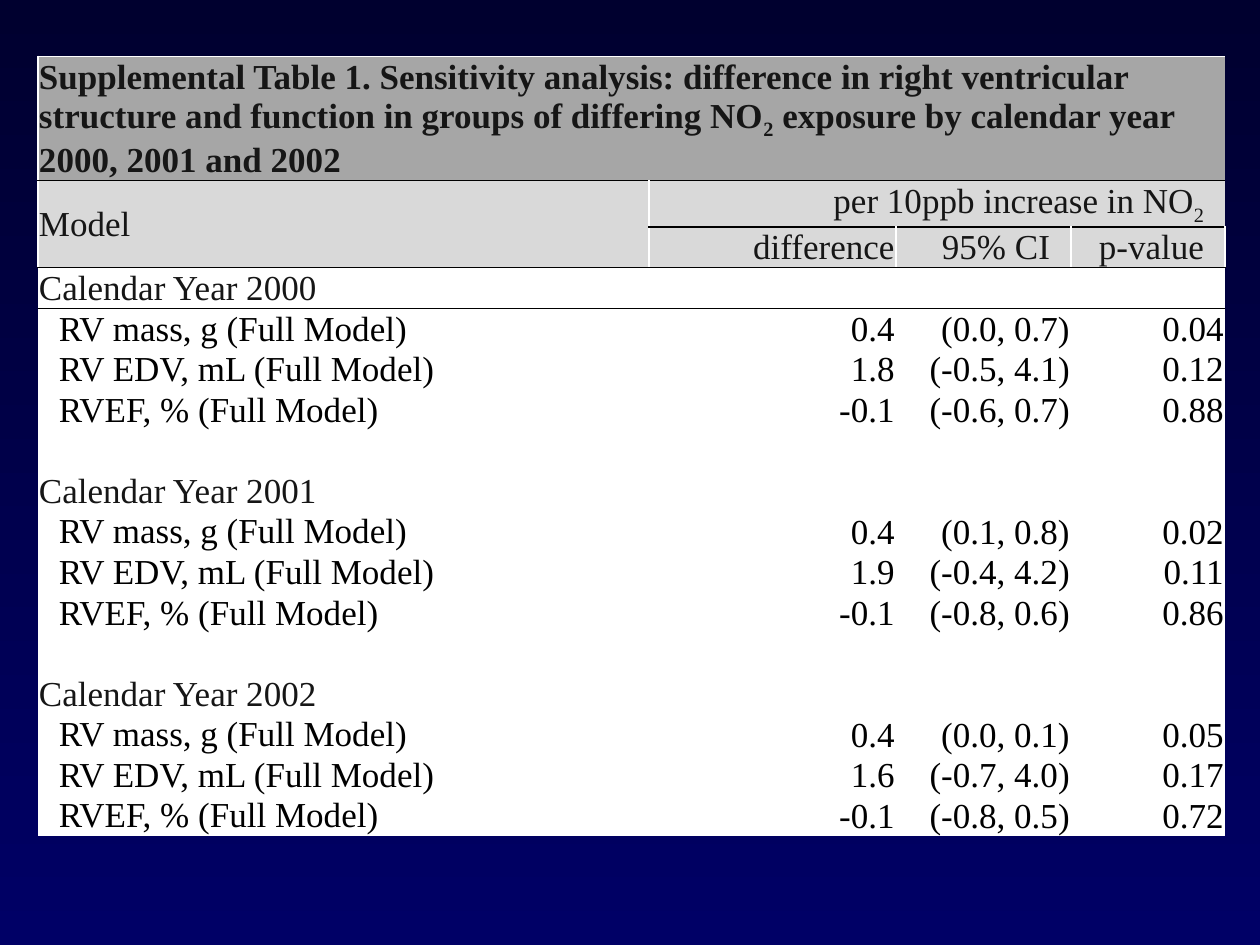
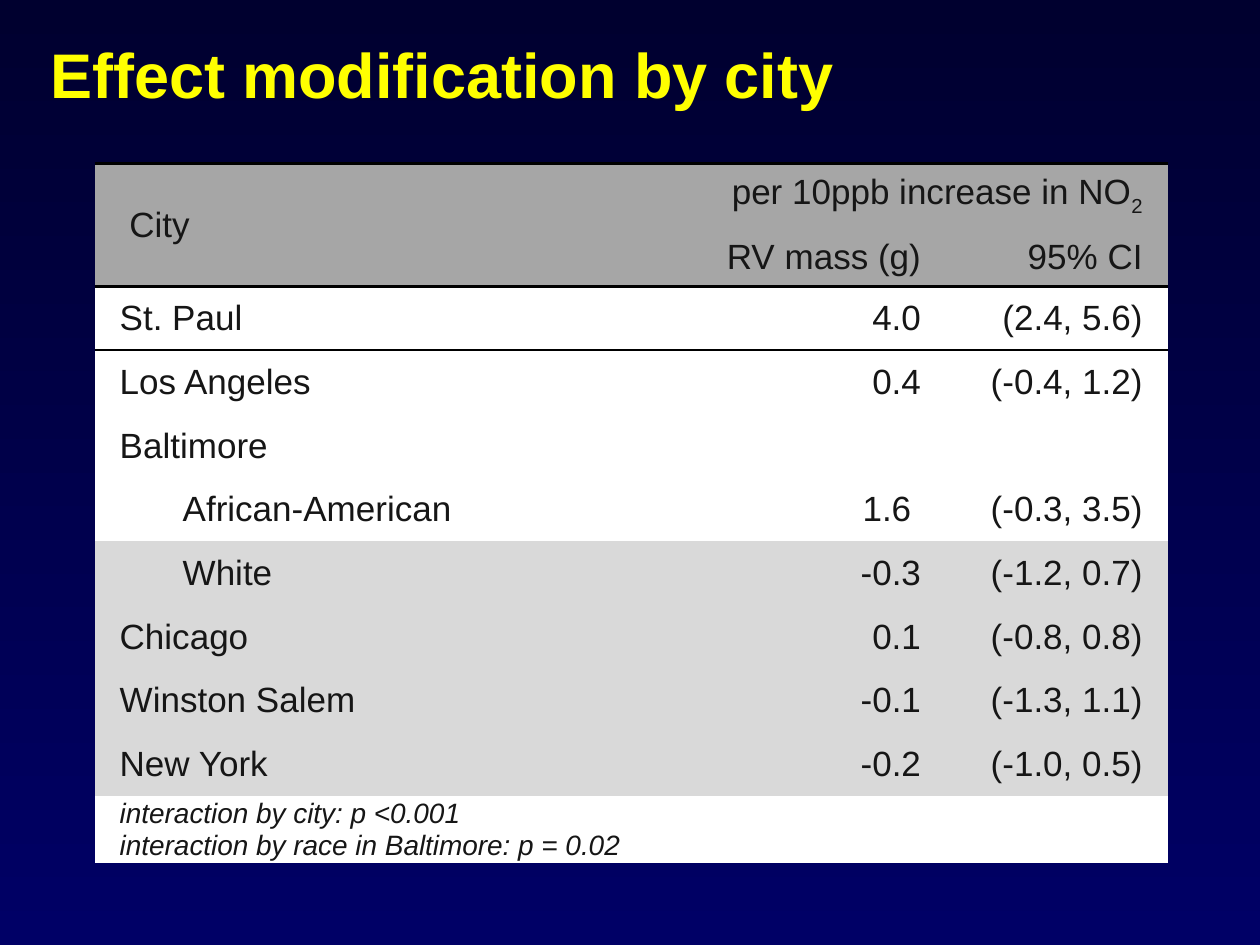
import dataclasses

import pptx
import pptx.dml.color
import pptx.enum.text
import pptx.oxml.ns
import pptx.util
from lxml import etree

Pt = pptx.util.Pt
ANCHOR = pptx.enum.text.MSO_ANCHOR
ALIGN = pptx.enum.text.PP_ALIGN


@dataclasses.dataclass(frozen=True)
class Theme:
    background_top: str = "00002F"
    background_bottom: str = "000066"
    title: str = "FFFF00"
    text: str = "161616"
    black: str = "000000"
    white: str = "FFFFFF"
    dark_band: str = "A6A6A6"
    light_band: str = "D9D9D9"
    sans: str = "Arial"
    serif: str = "Times New Roman"
    title_size: int = 36
    table_size: int = 20
    note_size: int = 16


THEME = Theme()
NO_STYLE = "{2D5ABB26-0587-4C30-8999-92F81FD0307C}"
BORDER_ORDER = ("lnL", "lnR", "lnT", "lnB")

# Content; a character between tildes is a subscript
EXPOSURE = "per 10ppb increase in NO~2~"

SENSITIVITY_TITLE = ("Supplemental Table 1. Sensitivity analysis: difference in right "
                     "ventricular structure and function in groups of differing NO~2~ "
                     "exposure by calendar year 2000, 2001 and 2002")
SENSITIVITY_HEADINGS = ("difference", "95% CI", "p-value")
MEASURES = ("RV mass, g (Full Model)", "RV EDV, mL (Full Model)", "RVEF, % (Full Model)")
YEARS = {
    "Calendar Year 2000": [("0.4", "(0.0, 0.7)", "0.04"),
                           ("1.8", "(-0.5, 4.1)", "0.12"),
                           ("-0.1", "(-0.6, 0.7)", "0.88")],
    "Calendar Year 2001": [("0.4", "(0.1, 0.8)", "0.02"),
                           ("1.9", "(-0.4, 4.2)", "0.11"),
                           ("-0.1", "(-0.8, 0.6)", "0.86")],
    "Calendar Year 2002": [("0.4", "(0.0, 0.1)", "0.05"),
                           ("1.6", "(-0.7, 4.0)", "0.17"),
                           ("-0.1", "(-0.8, 0.5)", "0.72")],
}

CITY_TITLE = "Effect modification by city"
CITY_HEADINGS = ("RV mass (g)", "95% CI")
CITIES = [
    ("St. Paul", "4.0", "(2.4, 5.6)"),
    ("Los Angeles", "0.4", "(-0.4, 1.2)"),
    ("Baltimore", "", ""),
    ("African-American", "1.6 ", "(-0.3, 3.5)"),
    ("White", "-0.3", "(-1.2, 0.7)"),
    ("Chicago", "0.1", "(-0.8, 0.8)"),
    ("Winston Salem", "-0.1", "(-1.3, 1.1)"),
    ("New York", "-0.2", "(-1.0, 0.5)"),
]
SUBGROUPS = ("African-American", "White")
FIRST_SHADED_CITY = 4
INTERACTIONS = "interaction by city: p <0.001\ninteraction by race in Baltimore: p = 0.02"


# Shared parts
def rgb(color):
    return pptx.dml.color.RGBColor.from_string(color)


def add_slide(presentation):
    slide = presentation.slides.add_slide(presentation.slide_layouts[6])
    fill = slide.background.fill
    fill.gradient()
    fill.gradient_angle = 270
    for stop, color in zip(fill.gradient_stops, (THEME.background_top, THEME.background_bottom)):
        stop.color.rgb = rgb(color)
    return slide


def style_font(font, name, size, color, bold=False, italic=False):
    font.name, font.size = name, Pt(size)
    font.bold, font.italic = bold, italic
    font.color.rgb = rgb(color)


def add_title(slide, text):
    box = slide.shapes.add_textbox(Pt(21.6), Pt(20.9), Pt(698.4), Pt(47.5))
    frame = box.text_frame
    frame.word_wrap = True
    frame.vertical_anchor = ANCHOR.MIDDLE
    paragraph = frame.paragraphs[0]
    paragraph.text = text
    paragraph.line_spacing = 0.9
    style_font(paragraph.font, THEME.sans, THEME.title_size, THEME.title, bold=True)


def add_table(slide, left, top, widths, heights):
    frame = slide.shapes.add_table(len(heights), len(widths), Pt(left), Pt(top),
                                   Pt(sum(widths)), Pt(sum(heights)))
    table = frame.table
    table.first_row = table.horz_banding = False
    table._tbl.tblPr.find(pptx.oxml.ns.qn("a:tableStyleId")).text = NO_STYLE
    for column, width in zip(table.columns, widths):
        column.width = Pt(width)
    for row, height in zip(table.rows, heights):
        row.height = Pt(height)
    return table


def set_cell(cell, text, fill, margins, font, align=ALIGN.LEFT, anchor=ANCHOR.MIDDLE, **style):
    """Fill a cell; font is (name, size, colour), margins are (left, top, right, bottom)."""
    cell.fill.solid()
    cell.fill.fore_color.rgb = rgb(fill)
    (cell.margin_left, cell.margin_top,
     cell.margin_right, cell.margin_bottom) = map(Pt, margins)
    cell.vertical_anchor = anchor
    frame = cell.text_frame
    for index, line in enumerate(text.split("\n")):
        paragraph = frame.add_paragraph() if index else frame.paragraphs[0]
        paragraph.alignment = align
        style_font(paragraph.font, *font, **style)
        for part_index, part in enumerate(line.split("~")):
            if part:
                run = paragraph.add_run()
                run.text = part
                if part_index % 2:
                    run._r.get_or_add_rPr().set("baseline", "-25000")


def set_border(table, rows, columns, side, color, width=1):
    for row in rows:
        for column in columns:
            properties = table.cell(row, column)._tc.get_or_add_tcPr()
            earlier = BORDER_ORDER[:BORDER_ORDER.index(side)]
            place = sum(etree.QName(child).localname in earlier for child in properties)
            line = etree.Element(pptx.oxml.ns.qn("a:" + side), w=str(Pt(width)))
            solid = etree.SubElement(line, pptx.oxml.ns.qn("a:solidFill"))
            etree.SubElement(solid, pptx.oxml.ns.qn("a:srgbClr"), val=color)
            properties.insert(place, line)


def build_sensitivity_slide(presentation):
    slide = add_slide(presentation)
    body_rows = []
    for year, results in YEARS.items():
        if body_rows:
            body_rows.append(("", "", "", ""))
        body_rows.append((year, "", "", ""))
        body_rows += [(measure, *values) for measure, values in zip(MEASURES, results)]

    table = add_table(slide, 21.6, 32.2, (349.2, 141.1, 100.1, 88),
                      [71, 26.6, 23.2] + [23.2] * len(body_rows))
    font = (THEME.serif, THEME.table_size, THEME.text)
    data_font = (THEME.serif, THEME.table_size, THEME.black)
    tight, indented, right_gap = (0.7, 0.7, 0.7, 0), (12, 0.7, 0.7, 0), (0.7, 0.7, 12, 0)

    # Heading rows
    table.cell(0, 0).merge(table.cell(0, 3))
    table.cell(1, 0).merge(table.cell(2, 0))
    table.cell(1, 1).merge(table.cell(1, 3))
    set_cell(table.cell(0, 0), SENSITIVITY_TITLE, THEME.dark_band, tight, font, bold=True)
    set_cell(table.cell(1, 0), "Model", THEME.light_band, tight, font)
    set_cell(table.cell(1, 1), EXPOSURE, THEME.light_band, right_gap, font, ALIGN.RIGHT)
    for column, heading in enumerate(SENSITIVITY_HEADINGS, 1):
        set_cell(table.cell(2, column), heading, THEME.light_band,
                 tight if column == 1 else right_gap, font, ALIGN.RIGHT)

    # Results by year
    for row, (label, *values) in enumerate(body_rows, 3):
        is_measure = label in MEASURES
        set_cell(table.cell(row, 0), label, THEME.white, indented if is_measure else tight,
                 data_font if is_measure else font)
        for column, value in enumerate(values, 1):
            set_cell(table.cell(row, column), value, THEME.white, tight, data_font,
                     ALIGN.RIGHT, ANCHOR.BOTTOM)

    # Rules
    for row, color in ((0, THEME.white), (1, THEME.black), (3, THEME.black)):
        set_border(table, [row], range(4), "lnT", color)
    set_border(table, range(3), [0], "lnL", THEME.white)
    set_border(table, [1], [1], "lnL", THEME.white)
    set_border(table, [2], range(1, 4), "lnL", THEME.white)
    set_border(table, [2], [3], "lnR", THEME.white)


def build_city_slide(presentation):
    slide = add_slide(presentation)
    add_title(slide, CITY_TITLE)
    table = add_table(slide, 54, 93.4, (313.2, 173.5, 126.7),
                      [36.4, 34] + [36.4] * (len(CITIES) + 1))
    font = (THEME.sans, THEME.table_size, THEME.text)
    margins, indented = (14.4, 0, 14.4, 0), (50.4, 0, 14.4, 0)

    # Heading rows
    table.cell(0, 0).merge(table.cell(1, 0))
    table.cell(0, 1).merge(table.cell(0, 2))
    set_cell(table.cell(0, 0), " City", THEME.dark_band, margins, font)
    set_cell(table.cell(0, 1), EXPOSURE, THEME.dark_band, margins, font, ALIGN.RIGHT)
    for column, heading in enumerate(CITY_HEADINGS, 1):
        set_cell(table.cell(1, column), heading, THEME.dark_band, margins, font, ALIGN.RIGHT)

    # Results by city
    for index, (city, *values) in enumerate(CITIES):
        fill = THEME.light_band if index >= FIRST_SHADED_CITY else THEME.white
        set_cell(table.cell(index + 2, 0), city, fill,
                 indented if city in SUBGROUPS else margins, font)
        for column, value in enumerate(values, 1):
            set_cell(table.cell(index + 2, column), value, fill, margins, font, ALIGN.RIGHT)

    # Interaction notes
    last = len(CITIES) + 2
    table.cell(last, 0).merge(table.cell(last, 2))
    set_cell(table.cell(last, 0), INTERACTIONS, THEME.white, margins,
             (THEME.sans, THEME.note_size, THEME.text), italic=True)

    # Rules
    for row in (0, 2):
        set_border(table, [row], range(3), "lnT", THEME.black, 1.5)


def main():
    presentation = pptx.Presentation()
    presentation.slide_width, presentation.slide_height = Pt(720), Pt(540)
    build_sensitivity_slide(presentation)
    build_city_slide(presentation)
    presentation.save("out.pptx")


if __name__ == "__main__":
    main()
